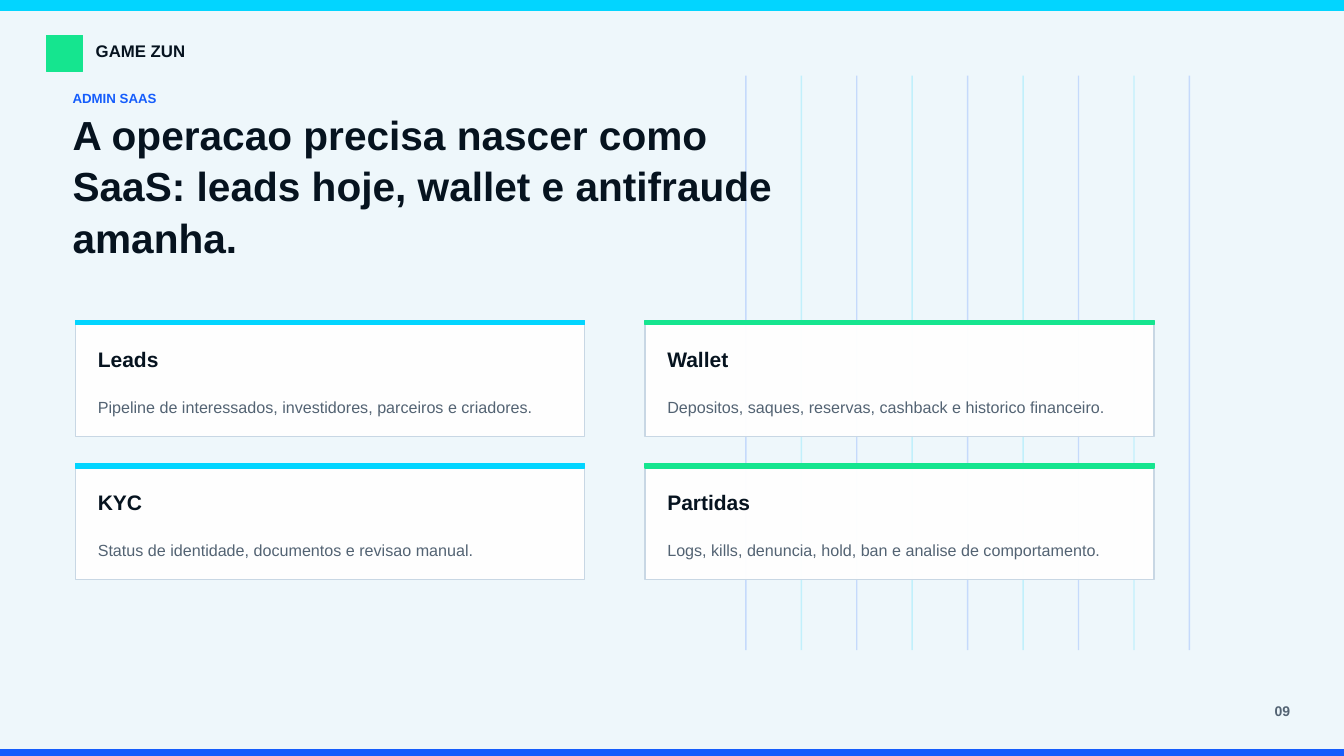
"""Build the admin SaaS slide with its grid of four operation cards."""

from dataclasses import dataclass

from lxml import etree
from pptx import Presentation
from pptx.dml.color import RGBColor
from pptx.enum.shapes import MSO_CONNECTOR, MSO_SHAPE
from pptx.enum.text import MSO_ANCHOR, MSO_AUTO_SIZE, PP_ALIGN
from pptx.oxml.ns import qn
from pptx.shapes.autoshape import Shape
from pptx.slide import Slide
from pptx.util import Pt

RECTANGLE = MSO_SHAPE.RECTANGLE
STRAIGHT = MSO_CONNECTOR.STRAIGHT
MIDDLE = MSO_ANCHOR.MIDDLE
NO_AUTOFIT = MSO_AUTO_SIZE.NONE
LEFT, RIGHT = PP_ALIGN.LEFT, PP_ALIGN.RIGHT


@dataclass(frozen=True)
class Theme:
    """Colours and type sizes of the slide."""

    font: str = "Arial"
    background: str = "EEF7FB"
    ink: str = "06131F"
    muted: str = "536373"
    cyan: str = "02D5FF"
    blue: str = "155DFC"
    green: str = "15E58F"
    white: str = "FFFFFF"
    border: str = "C8D7E4"
    title_size: float = 29
    heading_size: float = 15
    brand_size: float = 12
    body_size: float = 11.5
    page_size: float = 10
    kicker_size: float = 9.5


@dataclass(frozen=True)
class Box:
    """A rectangle in points."""

    left: float
    top: float
    width: float
    height: float


@dataclass(frozen=True)
class Label:
    """A line of text with its place and style."""

    text: str
    box: Box
    size: float
    color: str
    bold: bool = True
    align: PP_ALIGN = LEFT


@dataclass(frozen=True)
class Card:
    """An operation area and what it covers."""

    heading: str
    body: str


THEME = Theme()
SLIDE_WIDTH, SLIDE_HEIGHT = 960, 540
STRIPE_COUNT, STRIPE_LEFT, STRIPE_PITCH = 9, 532.8, 39.6
STRIPE_TOP, STRIPE_BOTTOM = 54, 464.4
CARD_LEFT, CARD_TOP = 54, 228.96
CARD_WIDTH, CARD_HEIGHT = 363.6, 82.8
COLUMN_PITCH, ROW_PITCH = 406.8, 102.24
CARD_INSET = 15.84

BANDS = [
    (Box(0, 0, SLIDE_WIDTH, 7.2), THEME.cyan),
    (Box(0, 535.5, SLIDE_WIDTH, 4.5), THEME.blue),
]
BRAND_MARK = Box(33.12, 25.2, 25.92, 25.92)
LABELS = [
    Label("GAME ZUN", Box(68.4, 29.52, 122.4, 12.96), THEME.brand_size, THEME.ink),
    Label("09", Box(884.16, 500.4, 37.44, 14.4), THEME.page_size, THEME.muted, align=RIGHT),
    Label("ADMIN SAAS", Box(51.84, 61.92, 252, 15.84), THEME.kicker_size, THEME.blue),
]
TITLE = Label(
    "A operacao precisa nascer como SaaS: leads hoje, wallet e antifraude amanha.",
    Box(51.84, 88.56, 532.8, 86.4), THEME.title_size, THEME.ink,
)
CARDS = [
    Card("Leads", "Pipeline de interessados, investidores, parceiros e criadores."),
    Card("Wallet", "Depositos, saques, reservas, cashback e historico financeiro."),
    Card("KYC", "Status de identidade, documentos e revisao manual."),
    Card("Partidas", "Logs, kills, denuncia, hold, ban e analise de comportamento."),
]


def rgb(color: str) -> RGBColor:
    """Turn a hex string into a colour."""
    return RGBColor.from_string(color)


def set_opacity(color_element: etree.ElementBase, percent: int) -> None:
    """Make a colour partly transparent."""
    etree.SubElement(color_element, qn("a:alpha")).set("val", str(percent * 1000))


def add_rectangle(slide: Slide, box: Box, fill: str, border: str) -> Shape:
    """Draw a flat rectangle with a one-point border."""
    rectangle = slide.shapes.add_shape(
        RECTANGLE, Pt(box.left), Pt(box.top), Pt(box.width), Pt(box.height))
    rectangle.shadow.inherit = False
    rectangle.fill.solid()
    rectangle.fill.fore_color.rgb = rgb(fill)
    rectangle.line.color.rgb = rgb(border)
    rectangle.line.width = Pt(1)
    return rectangle


def write_label(holder: Shape, label: Label) -> None:
    """Place and style a label in a text box or placeholder."""
    box = label.box
    holder.left, holder.top = Pt(box.left), Pt(box.top)
    holder.width, holder.height = Pt(box.width), Pt(box.height)
    frame = holder.text_frame
    frame.word_wrap = True
    frame.auto_size = NO_AUTOFIT
    frame.vertical_anchor = MIDDLE
    frame.margin_left = frame.margin_right = frame.margin_top = frame.margin_bottom = 0
    frame.text = label.text
    paragraph = frame.paragraphs[0]
    paragraph.alignment = label.align
    paragraph.font.name = THEME.font
    paragraph.font.size = Pt(label.size)
    paragraph.font.bold = label.bold
    paragraph.font.color.rgb = rgb(label.color)


def add_label(slide: Slide, label: Label) -> None:
    """Add a text box for a label."""
    write_label(slide.shapes.add_textbox(0, 0, 0, 0), label)


def add_stripe(slide: Slide, index: int) -> None:
    """Draw one faint vertical stripe."""
    x = Pt(STRIPE_LEFT + index * STRIPE_PITCH)
    stripe = slide.shapes.add_connector(STRAIGHT, x, Pt(STRIPE_TOP), x, Pt(STRIPE_BOTTOM))
    stripe.line.color.rgb = rgb(THEME.cyan if index % 2 else THEME.blue)
    stripe.line.width = Pt(1)
    set_opacity(stripe.element.xpath(".//a:ln//a:srgbClr")[0], 18)
    etree.SubElement(stripe.element.spPr, qn("a:effectLst"))


def add_card(slide: Slide, card: Card, index: int) -> None:
    """Draw a card at its place in the two-column grid."""
    row, column = divmod(index, 2)
    left, top = CARD_LEFT + column * COLUMN_PITCH, CARD_TOP + row * ROW_PITCH
    accent = THEME.green if column else THEME.cyan
    panel = add_rectangle(
        slide, Box(left, top, CARD_WIDTH, CARD_HEIGHT), THEME.white, THEME.border)
    set_opacity(panel.element.xpath("./p:spPr/a:solidFill/a:srgbClr")[0], 96)
    add_rectangle(slide, Box(left, top, CARD_WIDTH, 3), accent, accent)
    text_left, text_width = left + CARD_INSET, CARD_WIDTH - 2 * CARD_INSET
    add_label(slide, Label(
        card.heading, Box(text_left, top + 16.56, text_width, 21.6),
        THEME.heading_size, THEME.ink))
    add_label(slide, Label(
        card.body, Box(text_left, top + 51.84, text_width, 19.44),
        THEME.body_size, THEME.muted, bold=False))


def main() -> None:
    """Build and save the slide."""
    presentation = Presentation()
    presentation.slide_width, presentation.slide_height = Pt(SLIDE_WIDTH), Pt(SLIDE_HEIGHT)
    slide = presentation.slides.add_slide(presentation.slide_layouts.get_by_name("Title Only"))
    slide.background.fill.solid()
    slide.background.fill.fore_color.rgb = rgb(THEME.background)
    for band, color in BANDS:
        add_rectangle(slide, band, color, color)
    for index in range(STRIPE_COUNT):
        add_stripe(slide, index)
    add_rectangle(slide, BRAND_MARK, THEME.green, THEME.green)
    for label in LABELS:
        add_label(slide, label)
    title = slide.shapes.title
    write_label(title, TITLE)
    title.text_frame.paragraphs[0].line_spacing = 1.05
    slide.shapes.element.append(title.element)
    for index, card in enumerate(CARDS):
        add_card(slide, card, index)
    presentation.save("out.pptx")


if __name__ == "__main__":
    main()
